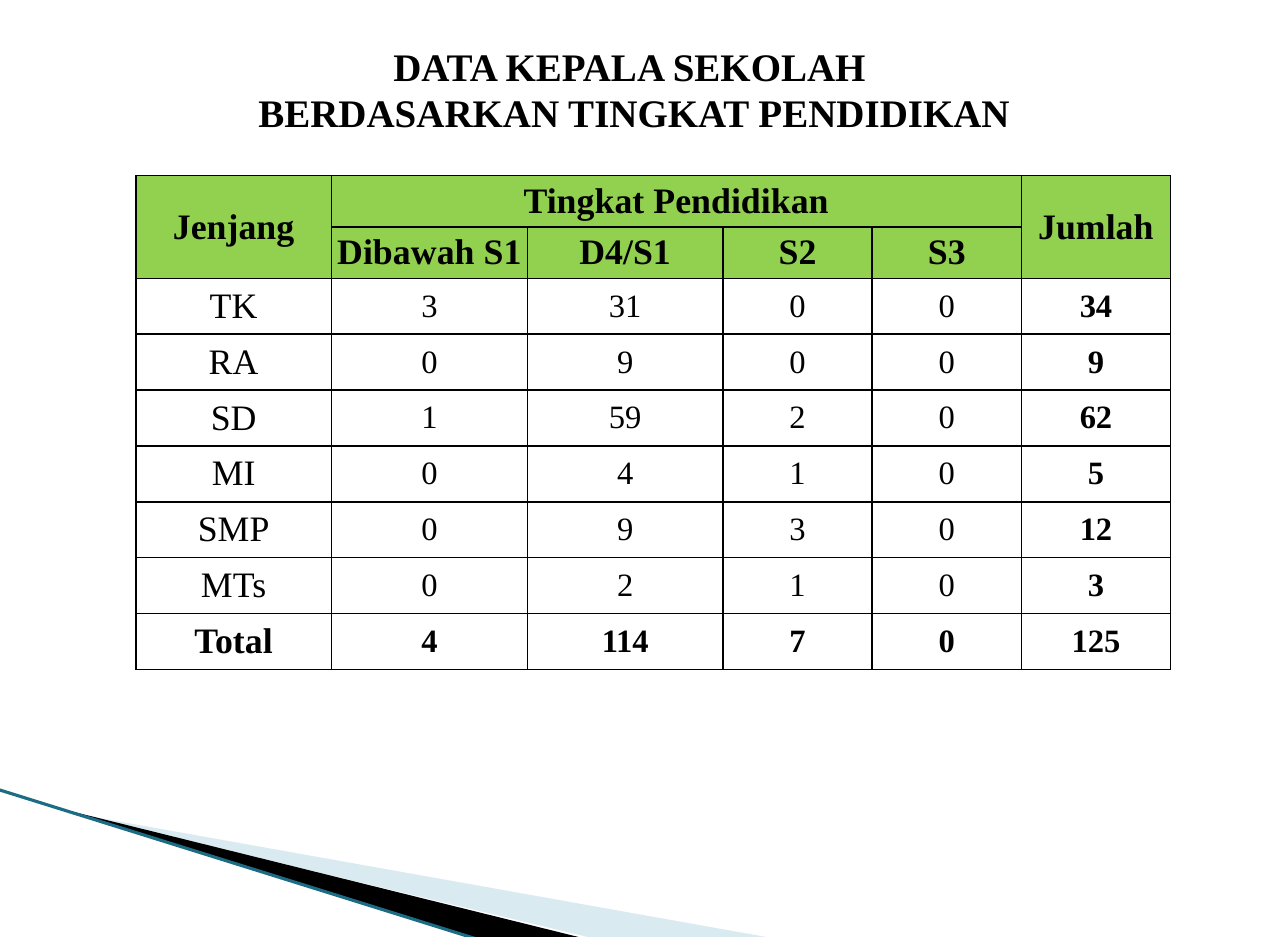
from lxml import etree
from pptx import Presentation
from pptx import util as u
from pptx.dml.color import RGBColor
from pptx.enum import shapes, text
from pptx.oxml import parse_xml
from pptx.oxml.ns import nsdecls, qn

WIDTH, HEIGHT = 5.5, 4
FONT = "Times New Roman"
COLORS = {"ink": "000000", "header": "92D050", "pale": "A0CBDC", "edge": "1B6C84"}

TITLE = ["DATA KEPALA SEKOLAH ", "BERDASARKAN TINGKAT PENDIDIKAN"]
HEADERS = [
    ["Jenjang", "Tingkat Pendidikan", "", "", "", "Jumlah"],
    ["", "Dibawah S1", "D4/S1", "S2", "S3", ""],
]
SCHOOLS = [
    ["TK", 3, 31, 0, 0, 34],
    ["RA", 0, 9, 0, 0, 9],
    ["SD", 1, 59, 2, 0, 62],
    ["MI", 0, 4, 1, 0, 5],
    ["SMP", 0, 9, 3, 0, 12],
    ["MTs", 0, 2, 1, 0, 3],
    ["Total", 4, 114, 7, 0, 125],
]
MERGES = [((0, 0), (1, 0)), ((0, 1), (0, 4)), ((0, 5), (1, 5))]
TABLE_BOX = (0.58, 0.75, 4.42, 2.11)
COLUMN_SHARES = [21] * 3 + [16] * 3
ROW_SHARES = [11] * len(HEADERS) + [12] * len(SCHOOLS)

# Corner wedges: outline, colour, opacity in percent
WEDGES = [
    ([(0.3, 3.47), (3.27, 4), (2.51, 4)], "pale", 40),
    ([(0.29, 3.46), (2.51, 4.01), (2.05, 4.01), (0.3, 3.47)], "ink", 100),
]
EDGE = [(-0.01, 3.37), (2.04, 4.01)]


def color(name):
    return RGBColor.from_string(COLORS[name])


def style(paragraph, size, bold):
    paragraph.alignment = text.PP_ALIGN.CENTER
    font = paragraph.font
    font.name, font.size, font.bold = FONT, u.Pt(size), bold
    font.color.rgb = color("ink")


def add_wedge(slide, outline, fill, opacity):
    start, *corners = [(u.Inches(x), u.Inches(y)) for x, y in outline]
    builder = slide.shapes.build_freeform(*start)
    builder.add_line_segments(corners, close=True)
    wedge = builder.convert_to_shape()
    wedge.shadow.inherit = False
    wedge.line.fill.background()
    wedge.fill.solid()
    wedge.fill.fore_color.rgb = color(fill)
    if opacity < 100:
        tint = wedge._element.spPr.find(".//" + qn("a:srgbClr"))
        etree.SubElement(tint, qn("a:alpha")).set("val", str(opacity * 1000))


def add_edge(slide):
    ends = [u.Inches(value) for point in EDGE for value in point]
    edge = slide.shapes.add_connector(shapes.MSO_CONNECTOR.STRAIGHT, *ends)
    edge.line.color.rgb = color("edge")
    edge.line.width = u.Pt(0.95)
    etree.SubElement(edge._element.spPr, qn("a:effectLst"))


def add_borders(cell):
    for side in "LRTB":
        cell._tc.get_or_add_tcPr().append(parse_xml(
            f'<a:ln{side} {nsdecls("a")} w="{u.Pt(0.5)}"><a:solidFill>'
            f'<a:srgbClr val="{COLORS["ink"]}"/></a:solidFill></a:ln{side}>'))


def fill_cell(cell, value, row, column):
    is_header = row < len(HEADERS)
    is_label = is_header or column == 0
    is_sum = column == len(COLUMN_SHARES) - 1 or row == len(ROW_SHARES) - 1
    cell.text = str(value)
    cell.vertical_anchor = text.MSO_ANCHOR.MIDDLE
    cell.margin_top = cell.margin_bottom = 0
    cell.margin_left = cell.margin_right = u.Inches(0 if is_label else 0.07)
    style(cell.text_frame.paragraphs[0], 11 if is_label else 10, is_header or is_sum)
    add_borders(cell)
    if is_header:
        cell.fill.solid()
        cell.fill.fore_color.rgb = color("header")
    else:
        cell.fill.background()


def add_school_table(slide):
    rows = HEADERS + SCHOOLS
    box = [u.Inches(value) for value in TABLE_BOX]
    table = slide.shapes.add_table(len(rows), len(COLUMN_SHARES), *box).table
    table.first_row = table.horz_banding = False
    for column, share in zip(table.columns, COLUMN_SHARES):
        column.width = int(box[2] * share / sum(COLUMN_SHARES))
    for row, share in zip(table.rows, ROW_SHARES):
        row.height = int(box[3] * share / sum(ROW_SHARES))
    for r, values in enumerate(rows):
        for c, value in enumerate(values):
            fill_cell(table.cell(r, c), value, r, c)
    for first, last in MERGES:
        table.cell(*first).merge(table.cell(*last))


def set_title(slide):
    title = slide.shapes.title
    title.left, title.top = u.Inches(0.25), u.Inches(0.33)
    title.width, title.height = u.Inches(4.92), u.Inches(0.25)
    frame = title.text_frame
    frame.text = "\n".join(TITLE)
    frame.word_wrap = True
    frame.auto_size = text.MSO_AUTO_SIZE.NONE
    frame.vertical_anchor = text.MSO_ANCHOR.BOTTOM
    frame.margin_left = frame.margin_right = frame.margin_bottom = 0
    frame.margin_top = u.Inches(0.03)
    for paragraph in frame.paragraphs:
        style(paragraph, 12, True)


def main():
    deck = Presentation()
    deck.slide_width, deck.slide_height = u.Inches(WIDTH), u.Inches(HEIGHT)
    slide = deck.slides.add_slide(deck.slide_layouts[5])
    for wedge in WEDGES:
        add_wedge(slide, *wedge)
    add_edge(slide)
    add_school_table(slide)
    set_title(slide)
    deck.save("out.pptx")


if __name__ == "__main__":
    main()
